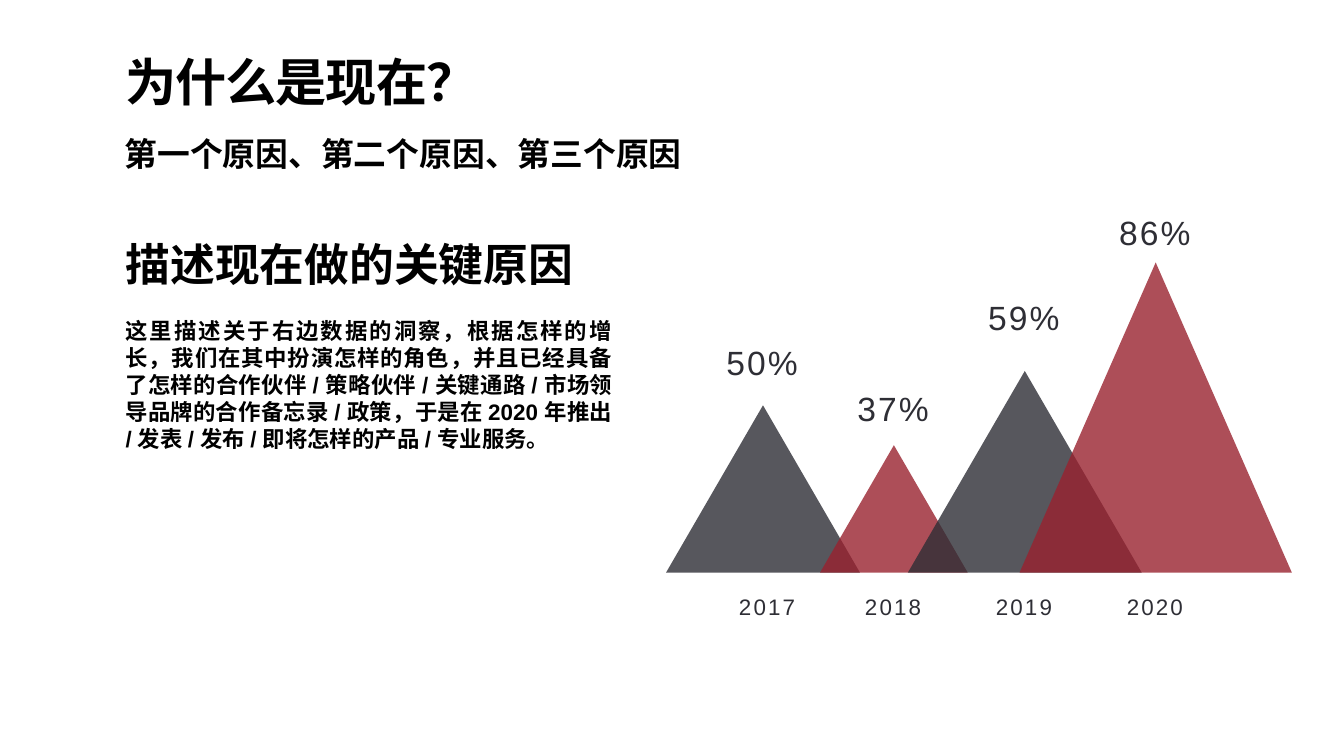
from dataclasses import dataclass

from lxml import etree
from pptx import Presentation
from pptx import util as u
from pptx.dml.color import RGBColor
from pptx.enum import shapes, text
from pptx.oxml.ns import qn

BLACK, DARK, RED = "000000", "2E2E35", "99222F"
BASE = 818
FIRST, STEP = 1090, 187
NUDGE = -1.2
YEAR_TOP = 844


@dataclass
class Peak:
    year: str
    share: str
    width: float
    height: float
    label_top: float
    color: str
    shift: float = 0


PEAKS = [
    Peak("2017", "50%", 277, 239, 485, DARK, 7),
    Peak("2018", "37%", 211, 182, 551, RED),
    Peak("2019", "59%", 334, 288, 420.5, DARK),
    Peak("2020", "86%", 389, 443, 299.5, RED),
]


def tint(target, color: str) -> None:
    target.rgb = RGBColor.from_string(color)


def place(shape, left: float, top: float, width: float, height: float) -> None:
    shape.left, shape.top = u.Pt(left), u.Pt(top)
    shape.width, shape.height = u.Pt(width), u.Pt(height)


def frame(shape, inset: float, wrap: bool = True):
    body = shape.text_frame
    body.word_wrap = wrap
    body.auto_size = text.MSO_AUTO_SIZE.NONE
    body.vertical_anchor = text.MSO_ANCHOR.TOP
    body.margin_left = body.margin_right = u.Pt(inset)
    body.margin_top = body.margin_bottom = u.Pt(inset)
    return body


def write(para, words: str, size: float, color: str = BLACK, bold: bool = True,
          align=text.PP_ALIGN.LEFT, space: float = 0) -> None:
    para.text = words
    para.alignment = align
    para._p.get_or_add_pPr().set("hangingPunct", "0")
    for run in para.runs:
        font = run.font
        font.name, font.size, font.bold = "Arial", u.Pt(size), bold
        tint(font.color, color)
        if space:
            run._r.get_or_add_rPr().set("spc", str(int(space * 100)))


def add_box(slide, left: float, top: float, width: float, height: float):
    return slide.shapes.add_textbox(u.Pt(left), u.Pt(top), u.Pt(width), u.Pt(height))


def add_label(slide, words: str, mid: float, top: float, width: float,
              height: float, size: float) -> None:
    box = add_box(slide, mid - width / 2, top, width, height)
    body = frame(box, 3.6, wrap=False)
    write(body.paragraphs[0], words, size, DARK, False, text.PP_ALIGN.CENTER, 3)


def add_peak(slide, peak: Peak, mid: float) -> None:
    shape = slide.shapes.add_shape(
        shapes.MSO_SHAPE.ISOSCELES_TRIANGLE, u.Pt(mid - peak.width / 2),
        u.Pt(BASE - peak.height), u.Pt(peak.width), u.Pt(peak.height))
    shape.shadow.inherit = False
    shape.fill.solid()
    tint(shape.fill.fore_color, peak.color)
    shape.line.fill.background()
    shade = shape._element.spPr.find(qn("a:solidFill")).find(qn("a:srgbClr"))
    etree.SubElement(shade, qn("a:alpha")).set("val", "80000")


def main() -> None:
    deck = Presentation()
    deck.slide_width, deck.slide_height = u.Pt(1920), u.Pt(1080)
    slide = deck.slides.add_slide(deck.slide_layouts[5])

    title = slide.shapes.title
    place(title, 175, 85, 1623, 113)
    head = frame(title, 4.3).paragraphs[0]
    write(head, "为什么是现在？", 73.1, space=-1.5)
    head.line_spacing = 0.8

    lead = frame(add_box(slide, 174.5, 187, 1623, 73.5), 3.6)
    write(lead.paragraphs[0], "第一个原因、第二个原因、第三个原因", 46.8)

    story = frame(add_box(slide, 175, 334, 704, 650), 4.3)
    write(story.paragraphs[0], "描述现在做的关键原因", 64, align=text.PP_ALIGN.JUSTIFY)
    para = story.add_paragraph()
    write(para, "这里描述关于右边数据的洞察，根据怎样的增长，我们在其中扮演怎样的角色，"
          "并且已经具备了怎样的合作伙伴 / 策略伙伴 / 关键通路 / 市场领导品牌的合作备忘录 / "
          "政策，于是在 2020 年推出 / 发表 / 发布 / 即将怎样的产品 / 专业服务。",
          32, align=text.PP_ALIGN.JUSTIFY)
    para.space_before = u.Pt(38.5)

    for i, peak in enumerate(PEAKS):
        mid = FIRST + STEP * i
        add_peak(slide, peak, mid)
        add_label(slide, peak.share, mid + NUDGE, peak.label_top, 112, 65.5, 48)
        add_label(slide, peak.year, mid + peak.shift + NUDGE, YEAR_TOP, 90, 46, 32)

    deck.save("out.pptx")


if __name__ == "__main__":
    main()
